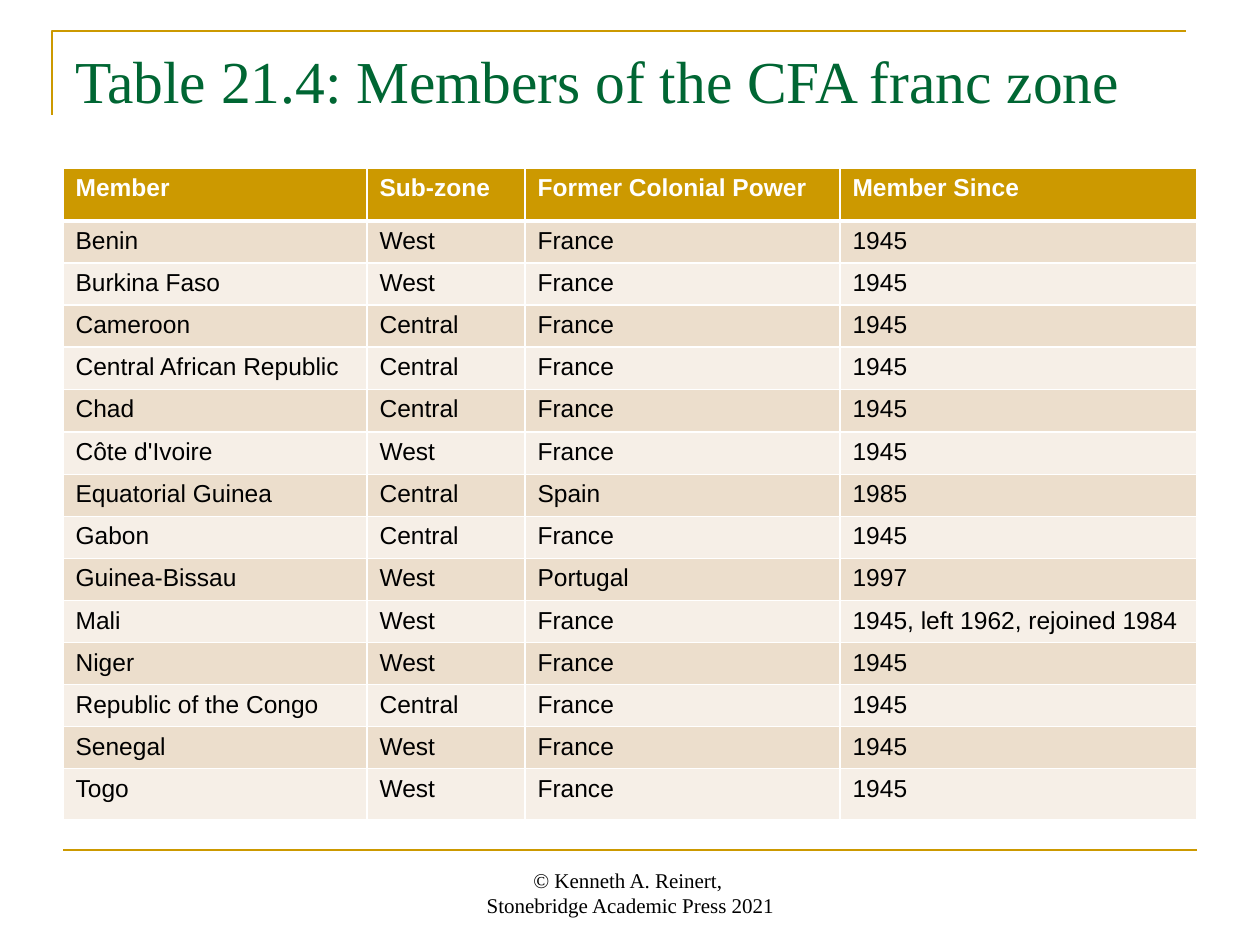
from lxml.etree import SubElement
from pptx import Presentation
from pptx.dml.color import RGBColor
from pptx.enum.shapes import MSO_CONNECTOR as Link
from pptx.enum.text import MSO_ANCHOR as Anchor, PP_ALIGN as Align
from pptx.oxml.ns import qn
from pptx.util import Pt

GOLD = RGBColor(0xCC, 0x99, 0x00)
GREEN = RGBColor(0x00, 0x66, 0x33)
BLACK = RGBColor(0, 0, 0)
WHITE = RGBColor(255, 255, 255)
SAND = RGBColor(0xEC, 0xDE, 0xCC)
CREAM = RGBColor(0xF6, 0xEF, 0xE7)
SERIF, SANS = "Times New Roman", "Arial"

TITLE = "Table 21.4: Members of the CFA franc zone"
CREDIT = ["© Kenneth A. Reinert, ", "Stonebridge Academic Press 2021"]
HEAD = ("Member", "Sub-zone", "Former Colonial Power", "Member Since")
ROWS = [
    ("Benin", "West", "France", "1945"),
    ("Burkina Faso", "West", "France", "1945"),
    ("Cameroon", "Central", "France", "1945"),
    ("Central African Republic", "Central", "France", "1945"),
    ("Chad", "Central", "France", "1945"),
    ("Côte d'Ivoire", "West", "France", "1945"),
    ("Equatorial Guinea", "Central", "Spain", "1985"),
    ("Gabon", "Central", "France", "1945"),
    ("Guinea-Bissau", "West", "Portugal", "1997"),
    ("Mali", "West", "France", "1945, left 1962, rejoined 1984"),
    ("Niger", "West", "France", "1945"),
    ("Republic of the Congo", "Central", "France", "1945"),
    ("Senegal", "West", "France", "1945"),
    ("Togo", "West", "France", "1945"),
]
WIDTHS = [304, 158, 315, 357]
HEIGHTS = [53] + [42] * 4 + [43] + [41, 40] * 4 + [51]


def px(n):
    return round(n * 914400 / 126)


def write(frame, lines, size, color, font=SANS, bold=False, align=Align.LEFT):
    for i, line in enumerate(lines):
        para = frame.add_paragraph() if i else frame.paragraphs[0]
        para.alignment = align
        run = para.add_run()
        run.text = line
        run.font.size = Pt(size)
        run.font.name = font
        run.font.bold = bold
        run.font.color.rgb = color


def add_box(slide, area, lines, anchor=Anchor.TOP, **style):
    frame = slide.shapes.add_textbox(*map(px, area)).text_frame
    frame.word_wrap = True
    frame.vertical_anchor = anchor
    write(frame, lines, **style)


def add_edges(cell, top, base):
    props = cell._tc.get_or_add_tcPr()
    for side, width in (("L", 1), ("R", 1), ("T", top), ("B", base)):
        line = SubElement(props, qn(f"a:ln{side}"), w=str(Pt(width)))
        fill = SubElement(line, qn("a:solidFill"))
        SubElement(fill, qn("a:srgbClr"), val=str(WHITE))


def add_rules(slide):
    build = slide.shapes.build_freeform(px(52), px(115))
    build.add_line_segments([(px(52), px(31)), (px(1186), px(31))], close=False)
    frame = build.convert_to_shape()
    frame.fill.background()
    frame.shadow.inherit = False
    rule = slide.shapes.add_connector(
        Link.STRAIGHT, px(63), px(850), px(1197), px(850))
    SubElement(rule._element.spPr, qn("a:effectLst"))
    for shape in (frame, rule):
        shape.line.color.rgb = GOLD
        shape.line.width = Pt(1.5)


def add_members(slide):
    data = [HEAD] + ROWS
    area = (63, 168, sum(WIDTHS), sum(HEIGHTS))
    table = slide.shapes.add_table(len(data), len(HEAD), *map(px, area)).table
    table.horz_banding = False
    for col, width in zip(table.columns, WIDTHS):
        col.width = px(width)
    for r, row in enumerate(data):
        table.rows[r].height = px(HEIGHTS[r])
        fill = GOLD if r == 0 else (CREAM, SAND)[r % 2]
        for c, text in enumerate(row):
            cell = table.cell(r, c)
            add_edges(cell, 3 if r == 1 else 1, 3 if r == 0 else 1)
            cell.fill.solid()
            cell.fill.fore_color.rgb = fill
            write(cell.text_frame, [text], 14, BLACK if r else WHITE, bold=r == 0)


def main():
    deck = Presentation()
    deck.slide_width, deck.slide_height = px(1260), px(945)
    slide = deck.slides.add_slide(deck.slide_layouts[6])
    add_rules(slide)
    add_box(slide, (63, 38, 1134, 157), [TITLE],
            size=34, color=GREEN, font=SERIF)
    add_members(slide)
    add_box(slide, (431, 861, 399, 63), CREDIT, anchor=Anchor.BOTTOM,
            size=12, color=BLACK, font=SERIF, align=Align.CENTER)
    deck.save("out.pptx")


if __name__ == "__main__":
    main()
